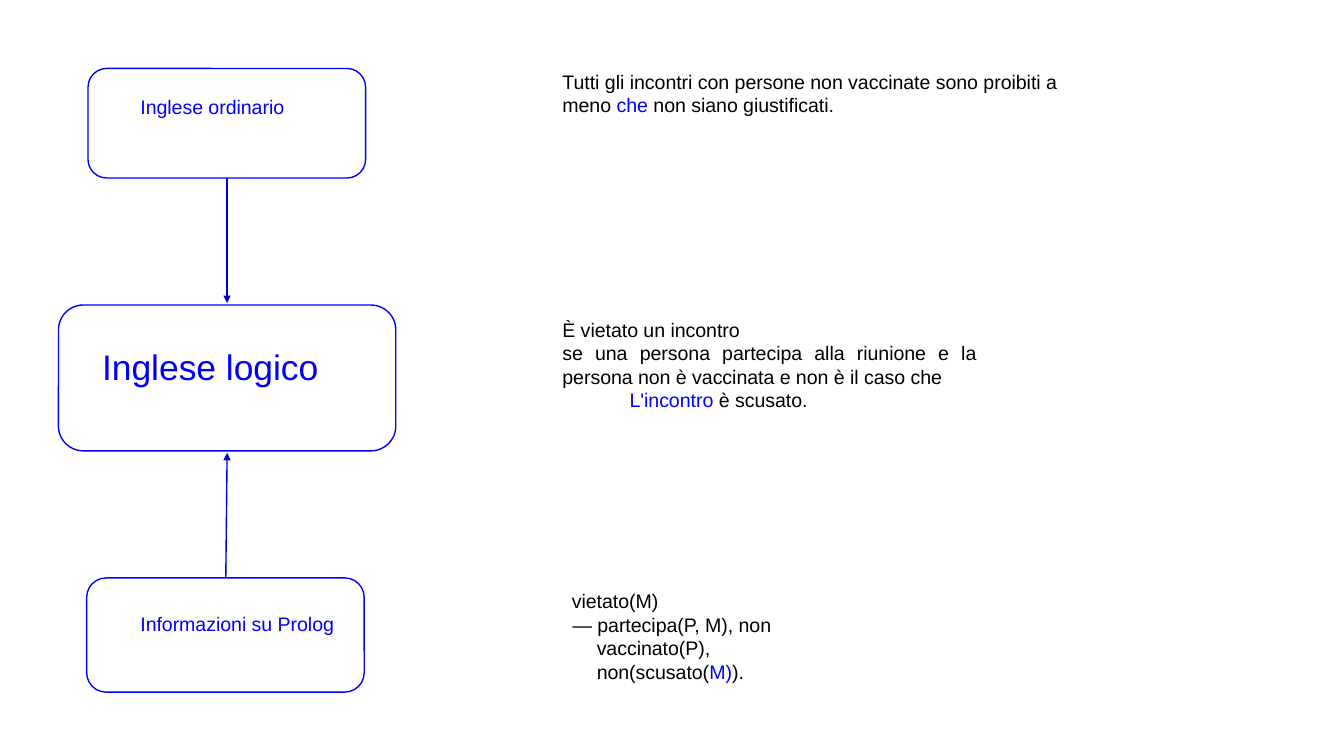
from dataclasses import dataclass

from lxml import etree
from pptx import Presentation
from pptx.dml.color import RGBColor
from pptx.enum.shapes import MSO_CONNECTOR, MSO_SHAPE
from pptx.enum.text import MSO_ANCHOR, PP_ALIGN
from pptx.oxml.ns import qn
from pptx.slide import Slide
from pptx.util import Pt

ROUNDED = MSO_SHAPE.ROUNDED_RECTANGLE
STRAIGHT = MSO_CONNECTOR.STRAIGHT
TOP = MSO_ANCHOR.TOP
LEFT = PP_ALIGN.LEFT
JUSTIFY = PP_ALIGN.JUSTIFY

EMU_PER_PX = 4572
COLORS = {"blue": "0000FF", "arrow": "0000CC", "black": "000000"}
FRAME_FORMAT = {
    "word_wrap": True,
    "vertical_anchor": TOP,
    "margin_left": 0,
    "margin_top": 3 * EMU_PER_PX,
    "margin_right": 0,
    "margin_bottom": 0,
}


@dataclass(frozen=True)
class Area:
    left: int
    top: int
    width: int
    height: int


@dataclass(frozen=True)
class Arrow:
    start: tuple[int, int]
    end: tuple[int, int]


@dataclass(frozen=True)
class Line:
    runs: tuple[tuple[str, str], ...]
    indent: int = 3
    hanging: int = 0
    align: PP_ALIGN = LEFT


@dataclass(frozen=True)
class TextBlock:
    area: Area
    lines: tuple[Line, ...]
    size: float = 10.5


BOXES = (
    Area(131, 102, 413, 163),
    Area(87, 454, 502, 217),
    Area(129, 860, 413, 170),
)
ARROWS = (
    Arrow((338, 265), (338, 451)),
    Arrow((336, 860), (338, 674)),
)
TEXTS = (
    TextBlock(Area(206, 138, 334, 38), (Line((("Inglese ordinario", "blue"),)),)),
    TextBlock(Area(149, 511, 360, 68), (Line((("Inglese logico", "blue"),)),), 19),
    TextBlock(Area(206, 907, 300, 74), (Line((("Informazioni su Prolog", "blue"),)),)),
    TextBlock(Area(834, 101, 782, 74), (
        Line((
            ("Tutti gli incontri con persone non vaccinate sono proibiti a meno ", "black"),
            ("che ", "blue"),
            ("non siano giustificati.", "black"),
        )),
    )),
    TextBlock(Area(834, 470, 620, 144), (
        Line((("È vietato un incontro", "black"),), align=JUSTIFY),
        Line((
            ("se una persona partecipa alla riunione e la persona "
             "non è vaccinata e non è il caso che", "black"),
        ), align=JUSTIFY),
        Line((("L'incontro ", "blue"), ("è scusato.", "black")), indent=103, align=JUSTIFY),
    )),
    TextBlock(Area(848, 874, 378, 144), (
        Line((("vietato(M)", "black"),)),
        Line((
            ("— partecipa(P, M), non vaccinato(P), non(scusato(", "black"),
            ("M)", "blue"),
            (").", "black"),
        ), indent=40, hanging=-36),
    )),
)


def px(value: int) -> int:
    return value * EMU_PER_PX


def place(area: Area) -> tuple[int, ...]:
    return tuple(px(value) for value in (area.left, area.top, area.width, area.height))


def color(name: str) -> RGBColor:
    return RGBColor.from_string(COLORS[name])


def apply_format(target: object, values: dict) -> None:
    for name, value in values.items():
        setattr(target, name, value)


def draw_box(slide: Slide, area: Area) -> None:
    shape = slide.shapes.add_shape(ROUNDED, *place(area))
    shape.adjustments[0] = 0.17
    shape.shadow.inherit = False
    shape.fill.background()
    shape.line.color.rgb = color("blue")
    shape.line.width = Pt(0.75)


def draw_arrow(slide: Slide, arrow: Arrow) -> None:
    points = (px(value) for value in (*arrow.start, *arrow.end))
    connector = slide.shapes.add_connector(STRAIGHT, *points)
    connector.line.color.rgb = color("arrow")
    connector.line.width = Pt(0.75)
    head = {"type": "triangle", "w": "sm", "len": "sm"}
    etree.SubElement(connector.line._get_or_add_ln(), qn("a:tailEnd"), head)
    etree.SubElement(connector._element.spPr, qn("a:effectLst"))


def draw_text(slide: Slide, block: TextBlock) -> None:
    frame = slide.shapes.add_textbox(*place(block.area)).text_frame
    apply_format(frame, FRAME_FORMAT)
    for index, line in enumerate(block.lines):
        paragraph = frame.add_paragraph() if index else frame.paragraphs[0]
        paragraph.alignment = line.align
        properties = paragraph._p.get_or_add_pPr()
        properties.set("marL", str(px(line.indent)))
        properties.set("indent", str(px(line.hanging)))
        for text, color_name in line.runs:
            run = paragraph.add_run()
            run.text = text
            apply_format(run.font, {"name": "Arial", "size": Pt(block.size)})
            run.font.color.rgb = color(color_name)


def main() -> None:
    presentation = Presentation()
    apply_format(presentation, {"slide_width": px(2000), "slide_height": px(1125)})
    slide = presentation.slides.add_slide(presentation.slide_layouts[6])
    for area in BOXES:
        draw_box(slide, area)
    for arrow in ARROWS:
        draw_arrow(slide, arrow)
    for block in TEXTS:
        draw_text(slide, block)
    presentation.save("out.pptx")


if __name__ == "__main__":
    main()
